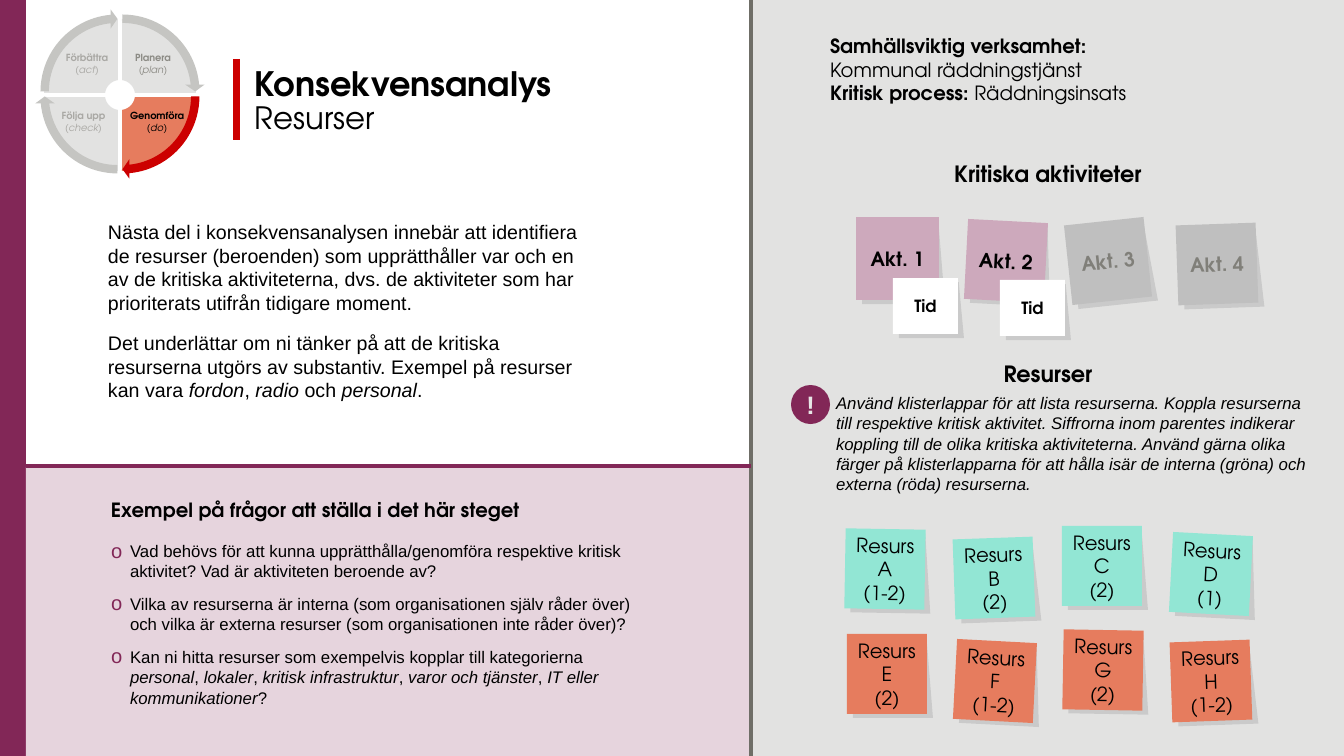
import math

from lxml import etree
from pptx import Presentation
from pptx.dml.color import RGBColor
from pptx.enum import shapes as kinds, text as txt
from pptx.oxml.ns import qn
from pptx.util import Pt

PX = 9071  # EMU per px
HEAD, BODY = "TeX Gyre Adventor", "Arial"
COLOURS = {
    "black": "000000", "white": "FFFFFF", "plum": "822757", "rose": "E6D4DD",
    "mauve": "CDA9BC", "panel": "E2E2E1", "divider": "6F6E67", "red": "CC0000",
    "coral": "E67C5E", "mint": "92E6D4", "idle": "BFBFBF", "idle_text": "807F79",
    "arrow": "C5C5C2", "label": "A9A8A4", "plan_label": "8C8B85", "mark": "E7E6E6",
}
BOLD, ITALIC = {"bold": True}, {"italic": True}


def px(*lengths):
    return [round(length * PX) for length in lengths]


def write(shape, paragraphs, size=14, font=BODY, colour="black", bold=False, italic=False,
          align="LEFT", anchor="TOP", inset=(10, 5), wrap=True, grow=False,
          line=None, after=0, bullet=None):
    """Fill a shape with paragraphs, each a list of strings or (string, format) pairs."""
    frame = shape.text_frame
    frame.word_wrap = wrap
    frame.vertical_anchor = txt.MSO_ANCHOR[anchor]
    frame.auto_size = txt.MSO_AUTO_SIZE.SHAPE_TO_FIT_TEXT if grow else txt.MSO_AUTO_SIZE.NONE
    frame.margin_left = frame.margin_right = inset[0] * PX
    frame.margin_top = frame.margin_bottom = inset[1] * PX
    for index, pieces in enumerate(paragraphs):
        paragraph = frame.add_paragraph() if index else frame.paragraphs[0]
        paragraph.alignment = txt.PP_ALIGN[align]
        paragraph.space_after = Pt(after)
        if line:
            paragraph.line_spacing = line
        if bullet:
            props = paragraph._p.get_or_add_pPr()
            props.set("marL", str(19 * PX))
            props.set("indent", str(-19 * PX))
            tint = etree.SubElement(props, qn("a:buClr"))
            etree.SubElement(tint, qn("a:srgbClr"), val=COLOURS["plum"])
            etree.SubElement(props, qn("a:buSzPct"), val="120000")
            etree.SubElement(props, qn("a:buFont"), typeface=font)
            etree.SubElement(props, qn("a:buChar"), char=bullet)
        for piece in pieces:
            words, own = piece if isinstance(piece, tuple) else (piece, {})
            if words.startswith("\n"):
                paragraph.add_line_break()
            run = paragraph.add_run()
            run.text = words.lstrip("\n")
            run.font.name = font
            run.font.size = Pt(own.get("size", size))
            run.font.bold = own.get("bold", bold)
            run.font.italic = own.get("italic", italic)
            run.font.color.rgb = RGBColor.from_string(COLOURS[colour])


deck = Presentation()
deck.slide_width, deck.slide_height = px(1344, 756)
slide = deck.slides.add_slide(deck.slide_layouts[6])
shapes = slide.shapes
RECT = kinds.MSO_SHAPE.RECTANGLE
painted = []  # (shape, colour), filled at the end

# Background areas
for area, colour in [((0, 0, 26, 756), "plum"), ((751, 0, 593, 756), "panel"),
                     ((26, 467, 725, 289), "rose")]:
    painted.append((shapes.add_shape(RECT, *px(*area)), colour))

# Title bar and dividers
for ends, colour, width in [((237, 59, 237, 140), "red", 5),
                            ((751, 0, 751, 756), "divider", 2.5),
                            ((26, 466, 751, 466), "plum", 2.5)]:
    rule = shapes.add_connector(kinds.MSO_CONNECTOR.STRAIGHT, *px(*ends))
    rule.line.color.rgb = RGBColor.from_string(COLOURS[colour])
    rule.line.width = Pt(width)
    etree.SubElement(rule._element.spPr, qn("a:effectLst"))

# Headings and running text
heading = dict(size=16, font=HEAD, bold=True, align="CENTER", after=12)
for box, paragraphs, style in [
    ((245, 62, 426, 84),
     [[("Konsekvensanalys", {"bold": True, "size": 24}), "\nResurser"]],
     dict(size=22, font=HEAD, line=0.9)),
    ((98, 215, 508, 194),
     [["Nästa del i konsekvensanalysen innebär att identifiera de resurser (beroenden) som "
       "upprätthåller var och en av de kritiska aktiviteterna, dvs. de aktiviteter som har "
       "prioriterats utifrån tidigare moment."],
      ["Det underlättar om ni tänker på att de kritiska resurserna utgörs av substantiv. "
       "Exempel på resurser kan vara ", ("fordon", ITALIC), ", ", ("radio ", ITALIC), "och ",
       ("personal", ITALIC), "."]],
     dict(after=12)),
    ((101, 493, 433, 34), [["Exempel på frågor att ställa i det här steget"]],
     dict(font=HEAD, bold=True, wrap=False)),
    ((101, 536, 552, 178),
     [["Vad behövs för att kunna upprätthålla/genomföra respektive kritisk aktivitet? "
       "Vad är aktiviteten beroende av?"],
      ["Vilka av resurserna är interna (som organisationen själv råder över) och vilka är "
       "externa resurser (som organisationen inte råder över)?"],
      ["Kan ni hitta resurser som exempelvis kopplar till kategorierna ",
       ("personal", ITALIC), ", ", ("lokaler", ITALIC), ", ",
       ("kritisk infrastruktur", ITALIC), ", ", ("varor och tjänster", ITALIC), ", ",
       ("IT eller kommunikationer", ITALIC), "?"]],
     dict(size=12, after=9, bullet="o")),
    ((820, 29, 400, 82),
     [[("Samhällsviktig verksamhet:", BOLD), "\nKommunal räddningstjänst",
       ("\nKritisk process: ", BOLD), "Räddningsinsats"]],
     dict(font=HEAD, after=12)),
    ((826, 155, 444, 37), [["Kritiska aktiviteter"]], heading),
    ((826, 355, 444, 37), [["Resurser"]], heading),
    ((826, 388, 502, 112),
     [["Använd klisterlappar för att lista resurserna. Koppla resurserna till respektive "
       "kritisk aktivitet. Siffrorna inom parentes indikerar koppling till de olika kritiska "
       "aktiviteterna. Använd gärna olika färger på klisterlapparna för att hålla isär de "
       "interna (gröna) och externa (röda) resurserna."]],
     dict(size=12, italic=True, after=12)),
]:
    write(shapes.add_textbox(*px(*box)), paragraphs, grow=True, **style)

# Exclamation badge
badge = shapes.add_shape(kinds.MSO_SHAPE.OVAL, *px(791, 385, 39, 39))
write(badge, [["!"]], size=18, colour="mark", bold=True, align="CENTER", anchor="MIDDLE",
      inset=(0, 0))
painted.append((badge, "plum"))

# Sticky notes with their shadows
active, idle = dict(bold=True), dict(bold=True, colour="idle_text")
time = dict(bold=True, size=12, inset=(0, 0))
for lines, left, top, width, height, turn, colour, style in [
    (["Resurs A", "(1-2)"], 845, 529, 80, 80, 1, "mint", {}),
    (["Resurs B", "(2)"], 954, 538, 80, 80, -2, "mint", {}),
    (["Resurs C", "(2)"], 1062, 526, 80, 80, 0, "mint", {}),
    (["Resurs D", "(1)"], 1171, 534, 80, 80, 3, "mint", {}),
    (["Resurs E", "(2)"], 847, 634, 80, 80, 0, "coral", {}),
    (["Resurs F", "(1-2)"], 955, 641, 80, 80, 3, "coral", {}),
    (["Resurs G", "(2)"], 1063, 630, 80, 80, 1, "coral", {}),
    (["Resurs H", "(1-2)"], 1171, 641, 80, 80, -2, "coral", {}),
    (["Akt. 1"], 856, 217, 83, 83, 0, "mauve", active),
    (["Akt. 2"], 966, 221, 80, 80, 3, "mauve", active),
    (["Akt. 3"], 1068, 221, 80, 80, -6.1, "idle", idle),
    (["Akt. 4"], 1177, 224, 80, 80, -2, "idle", idle),
    (["Tid"], 893, 278, 65, 56, 0, "white", time),
    (["Tid"], 1000, 280, 65, 56, 0, "white", time),
]:
    group = shapes.add_group_shape().shapes
    x, y = left + 6, top + 4
    outline = group.build_freeform(*px(x, y), scale=1)
    outline.add_line_segments([px(x + 0.92 * width, y), px(x + width, y + height),
                               px(x, y + height)])
    shade = outline.convert_to_shape()
    note = group.add_shape(RECT, *px(left, top, width, height))
    shade.rotation = note.rotation = turn
    write(note, [[words] for words in lines],
          **{"font": HEAD, "align": "CENTER", "anchor": "MIDDLE", "inset": (7, 5), **style})
    painted += [(shade, "shade"), (note, colour)]

# Wheel: wedges, then arrows and labels
wheel = shapes.add_group_shape().shapes
for right, down, colour in [(-1, -1, "panel"), (1, -1, "panel"), (1, 1, "coral"),
                            (-1, 1, "panel")]:
    arc = [(2 + 74 * math.cos(math.radians(a)), 2 + 74 * math.sin(math.radians(a)))
           for a in range(0, 91, 3)]
    arc += [(15 * math.cos(math.radians(a)), 15 * math.sin(math.radians(a)))
            for a in range(82, 7, -2)]
    points = [px(120 + right * x, 95 + down * y) for x, y in arc]
    outline = wheel.build_freeform(*points[0], scale=1)
    outline.add_line_segments(points[1:])
    painted.append((outline.convert_to_shape(), colour))

for phase, english, corner, start, colour, box, ink in [
    ("Förbättra", "(act)", (35, 9), 108, "arrow", (55, 48, 64, 33), "label"),
    ("Planera", "(plan)", (40, 9), 162, "arrow", (116, 48, 74, 33), "plan_label"),
    ("Genomföra", "(do)", (40, 14), 0, "red", (119, 106, 76, 33), "black"),
    ("Följa upp", "(check)", (35, 14), 54, "arrow", (51, 106, 65, 33), "label"),
]:
    arrow = wheel.add_shape(kinds.MSO_SHAPE.CIRCULAR_ARROW, *px(*corner, 165, 165))
    for index, value in enumerate([0.051, 3.275, start + 50.725, start, 0.059]):
        arrow.adjustments[index] = value
    painted.append((arrow, colour))
    write(wheel.add_textbox(*px(*box)), [[(phase, BOLD)], [(english, ITALIC)]], size=7,
          font=HEAD, colour=ink, align="CENTER", line=0.9, after=1, wrap=False, grow=True)

# Fills, without outlines or effects
for shape, colour in painted:
    shape.shadow.inherit = False
    shape.line.fill.background()
    shape.fill.solid()
    shape.fill.fore_color.rgb = RGBColor.from_string(COLOURS.get(colour, COLOURS["black"]))
    if colour == "shade":
        tone = shape._element.spPr.find(qn("a:solidFill")).find(qn("a:srgbClr"))
        etree.SubElement(tone, qn("a:alpha"), val="10000")

deck.save("out.pptx")
